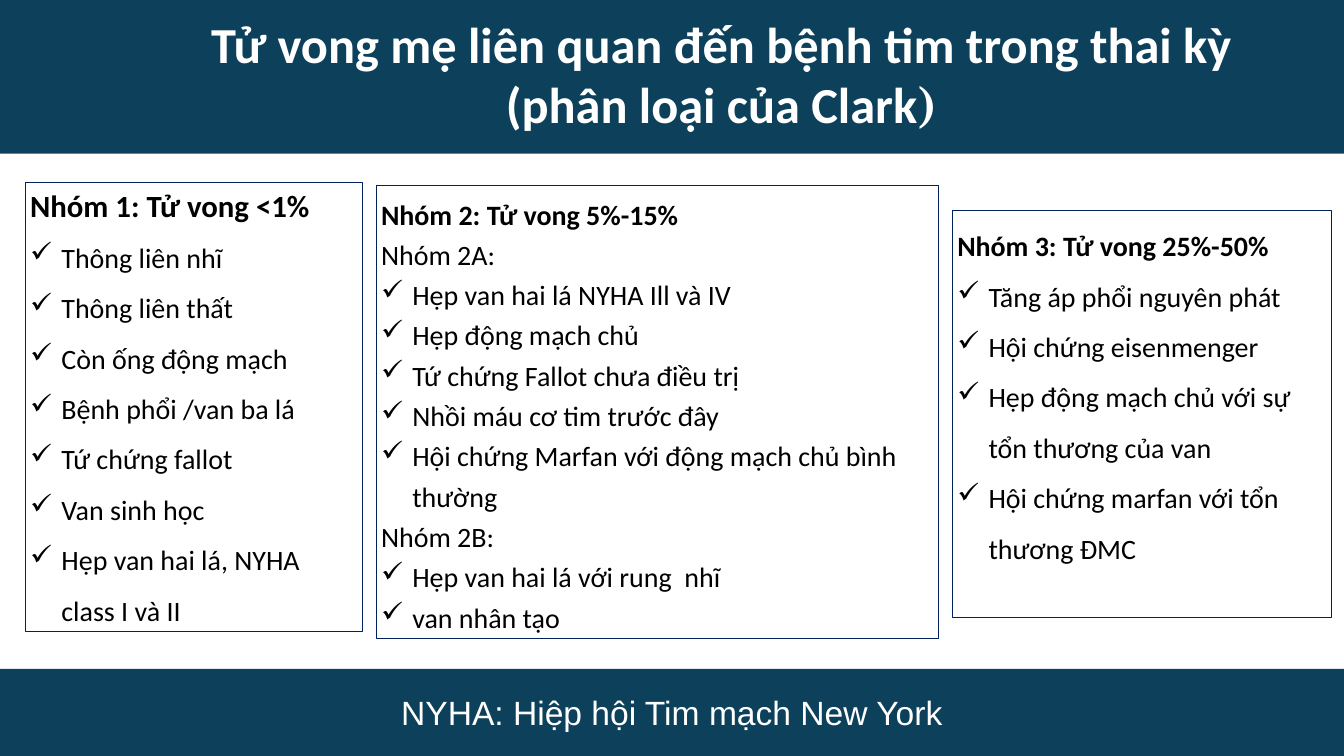
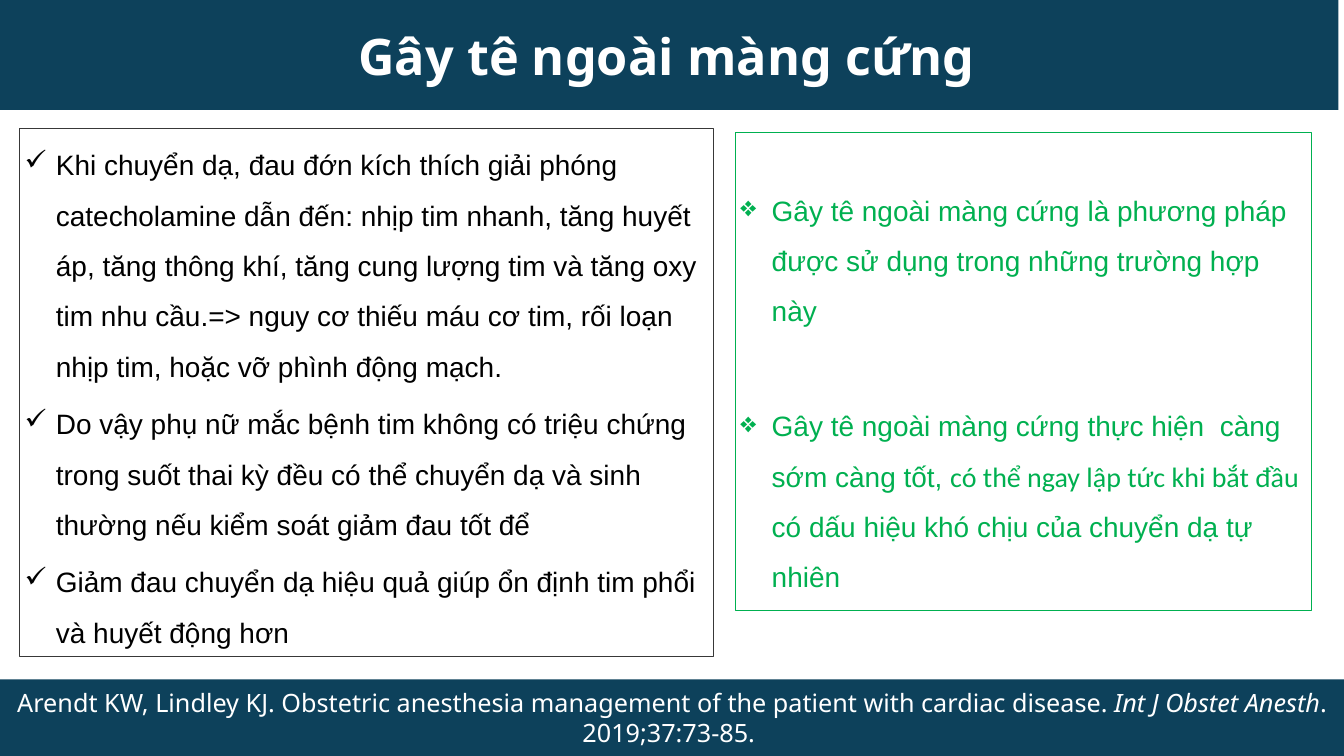
"""Build two slides on heart disease in pregnancy and epidural analgesia."""
import pptx
import pptx.dml.color
import pptx.enum.shapes
import pptx.enum.text
import pptx.util
from lxml import etree

PX = 9144
SLIDE_WIDTH, SLIDE_HEIGHT = 2666, 1500
COLORS = {"band": "0D415B", "white": "FFFFFF", "black": "000000",
          "navy": "002060", "green": "00B050", "gray": "383838"}
CHECK, DIAMOND = "✓", "❖"
HANGING = 62
BODY_SIZE, TITLE_SIZE = 40, 72

MORTALITY_TITLE = [("Tử vong mẹ liên quan đến bệnh tim trong thai kỳ (phân loại của Clark", {}),
                   (")", {"font": "TeX Gyre Schola"})]
MORTALITY_FOOTER = [("NYHA: Hiệp hội Tim mạch New York", {})]
MORTALITY_GROUPS = [
    {"box": (50, 361, 669, 892), "heading": "Nhóm 1: Tử vong <1%",
     "heading_size": 44, "heading_spacing": 1, "spacing": 1.5, "bottom": 5,
     "parts": [("", ["Thông liên nhĩ", "Thông liên thất", "Còn ống động mạch",
                     "Bệnh phổi /van ba lá", "Tứ chứng fallot", "Van sinh học",
                     "Hẹp van hai lá, NYHA class I và II"])]},
    {"box": (746, 368, 1116, 899), "heading": "Nhóm 2: Tử vong 5%-15%",
     "heading_size": 40, "heading_spacing": 1.2, "spacing": 1.2, "bottom": 5,
     "parts": [("Nhóm 2A:", ["Hẹp van hai lá NYHA Ill và IV", "Hẹp động mạch chủ",
                             "Tứ chứng Fallot chưa điều trị", "Nhồi máu cơ tim trước đây",
                             "Hội chứng Marfan với động mạch chủ bình thường"]),
               ("Nhóm 2B:", ["Hẹp van hai lá với rung  nhĩ", "van nhân tạo"])]},
    {"box": (1889, 417, 751, 807), "heading": "Nhóm 3: Tử vong 25%-50%",
     "heading_size": 40, "heading_spacing": 1.5, "spacing": 1.5, "bottom": 105,
     "parts": [("", ["Tăng áp phổi nguyên phát", "Hội chứng eisenmenger",
                     "Hẹp động mạch chủ với sự tổn thương của van",
                     "Hội chứng marfan với tổn thương ĐMC"])]},
]

EPIDURAL_TITLE = [("Gây tê ngoài màng cứng", {})]
EPIDURAL_FOOTER = [
    ("Arendt KW, Lindley KJ. Obstetric anesthesia management of the patient with cardiac disease. ", {}),
    ("Int J Obstet Anesth", {"italic": True}),
    (". 2019;37:73-85. ", {}),
]
EPIDURAL_PANELS = [
    {"box": (1459, 262, 1143, 948), "line": "green", "color": "green", "bullet": DIAMOND,
     "top": 88, "gap": 82,
     "items": [[("Gây tê ngoài màng cứng là phương pháp được sử dụng trong những trường hợp này", {})],
               [("Gây tê ngoài màng cứng thực hiện  càng sớm càng tốt, ", {}),
                ("có thể ngay lập tức khi bắt đầu ", {"font": "Calibri"}),
                ("có dấu hiệu khó chịu của chuyển dạ tự nhiên", {})]]},
    {"box": (39, 255, 1375, 1048), "line": "gray", "color": "black", "bullet": CHECK,
     "top": 5, "gap": 0,
     "items": [[("Khi chuyển dạ, đau đớn kích thích giải phóng catecholamine dẫn đến: "
                 "nhịp tim nhanh, tăng huyết áp, tăng thông khí, tăng cung lượng tim và "
                 "tăng oxy tim nhu cầu.=> nguy cơ thiếu máu cơ tim, rối loạn nhịp tim, "
                 "hoặc vỡ phình động mạch.", {})],
               [("Do vậy phụ nữ mắc bệnh tim không có triệu chứng trong suốt thai kỳ đều có thể "
                 "chuyển dạ và sinh thường nếu kiểm soát giảm đau tốt để", {})],
               [("Giảm đau chuyển dạ hiệu quả giúp ổn định tim phổi và huyết động hơn", {})]]},
]


def color(name):
    return pptx.dml.color.RGBColor.from_string(COLORS[name])


def add_box(slide, box, fill=None, line=None, anchor="MIDDLE", top=5, bottom=5):
    panel = slide.shapes.add_shape(pptx.enum.shapes.MSO_SHAPE.RECTANGLE, *(n * PX for n in box))
    panel.shadow.inherit = False
    if fill:
        panel.fill.solid()
        panel.fill.fore_color.rgb = color(fill)
    else:
        panel.fill.background()
    if line:
        panel.line.color.rgb = color(line)
        panel.line.width = pptx.util.Pt(0.75)
    else:
        panel.line.fill.background()
    frame = panel.text_frame
    frame.word_wrap = True
    frame.vertical_anchor = pptx.enum.text.MSO_ANCHOR[anchor]
    frame.margin_top, frame.margin_bottom = top * PX, bottom * PX
    return frame


def write(frame, runs, size, font, ink, bold=False, align="LEFT", spacing=1,
          bullet=None, before=0, after=0):
    first = frame.paragraphs[0]
    paragraph = frame.add_paragraph() if first.runs else first
    paragraph.alignment = pptx.enum.text.PP_ALIGN[align]
    paragraph.line_spacing = float(spacing)
    paragraph.space_before = pptx.util.Pt(before)
    paragraph.space_after = pptx.util.Pt(after)
    if bullet:
        properties = paragraph._p.get_or_add_pPr()
        properties.set("marL", str(HANGING * PX))
        properties.set("indent", str(-HANGING * PX))
        etree.SubElement(properties, pptx.oxml.ns.qn("a:buChar")).set("char", bullet)
    for words, style in runs:
        run = paragraph.add_run()
        run.text = words
        run.font.name = style.get("font", font)
        run.font.size = pptx.util.Pt(size)
        run.font.bold = bold
        run.font.italic = style.get("italic", False)
        run.font.color.rgb = color(ink)


def add_band(slide, top, height, left=0):
    return add_box(slide, (left, top, SLIDE_WIDTH, height), fill="band")


def add_title(frame, runs, font):
    write(frame, runs, TITLE_SIZE, font, "white", bold=True, align="CENTER")


def add_footer(slide, height, runs, size, font):
    frame = add_band(slide, SLIDE_HEIGHT - height, height)
    write(frame, runs, size, font, "white", align="CENTER")


def build_mortality(slide):
    add_band(slide, 0, 305)
    add_footer(slide, 173, MORTALITY_FOOTER, 48, "Arial")
    title = slide.shapes.add_textbox(*(n * PX for n in (296, 21, 2271, 252))).text_frame
    title.word_wrap = True
    add_title(title, MORTALITY_TITLE, "Calibri")
    for group in MORTALITY_GROUPS:
        frame = add_box(slide, group["box"], line="navy", bottom=group["bottom"])
        write(frame, [(group["heading"], {})], group["heading_size"], "Calibri", "black",
              bold=True, spacing=group["heading_spacing"])
        for subgroup, conditions in group["parts"]:
            lines = [(subgroup, None)] if subgroup else []
            lines += [(condition, CHECK) for condition in conditions]
            for words, bullet in lines:
                write(frame, [(words, {})], BODY_SIZE, "Calibri", "black",
                      spacing=group["spacing"], bullet=bullet)


def build_epidural(slide):
    add_title(add_band(slide, 0, 218, left=-11), EPIDURAL_TITLE, "Noto Sans")
    add_footer(slide, 152, EPIDURAL_FOOTER, 36, "Noto Sans")
    for panel in EPIDURAL_PANELS:
        frame = add_box(slide, panel["box"], line=panel["line"], anchor="TOP", top=panel["top"])
        for index, runs in enumerate(panel["items"]):
            write(frame, runs, BODY_SIZE, "Arial", panel["color"], spacing=1.5,
                  bullet=panel["bullet"], before=panel["gap"] if index else 0, after=10)


def main():
    deck = pptx.Presentation()
    deck.slide_width, deck.slide_height = SLIDE_WIDTH * PX, SLIDE_HEIGHT * PX
    for build in (build_mortality, build_epidural):
        build(deck.slides.add_slide(deck.slide_layouts[6]))
    deck.save("out.pptx")


if __name__ == "__main__":
    main()
